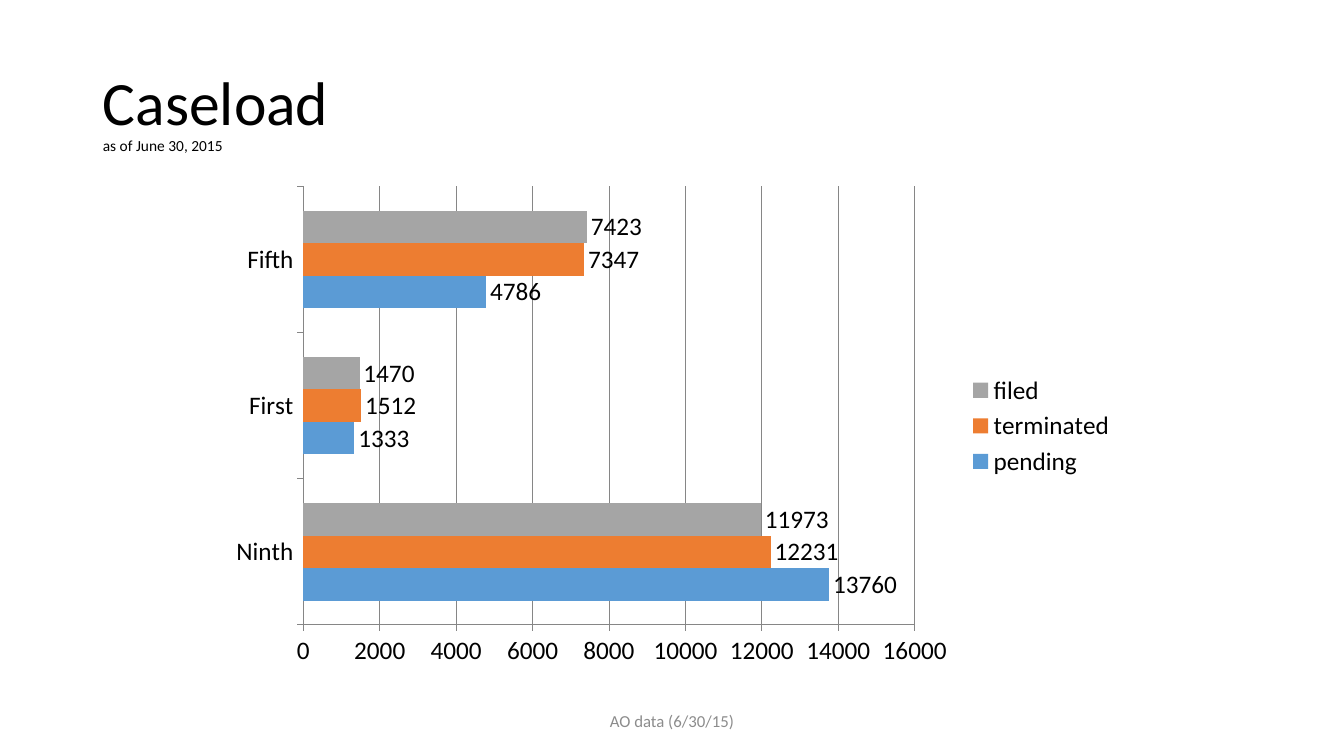
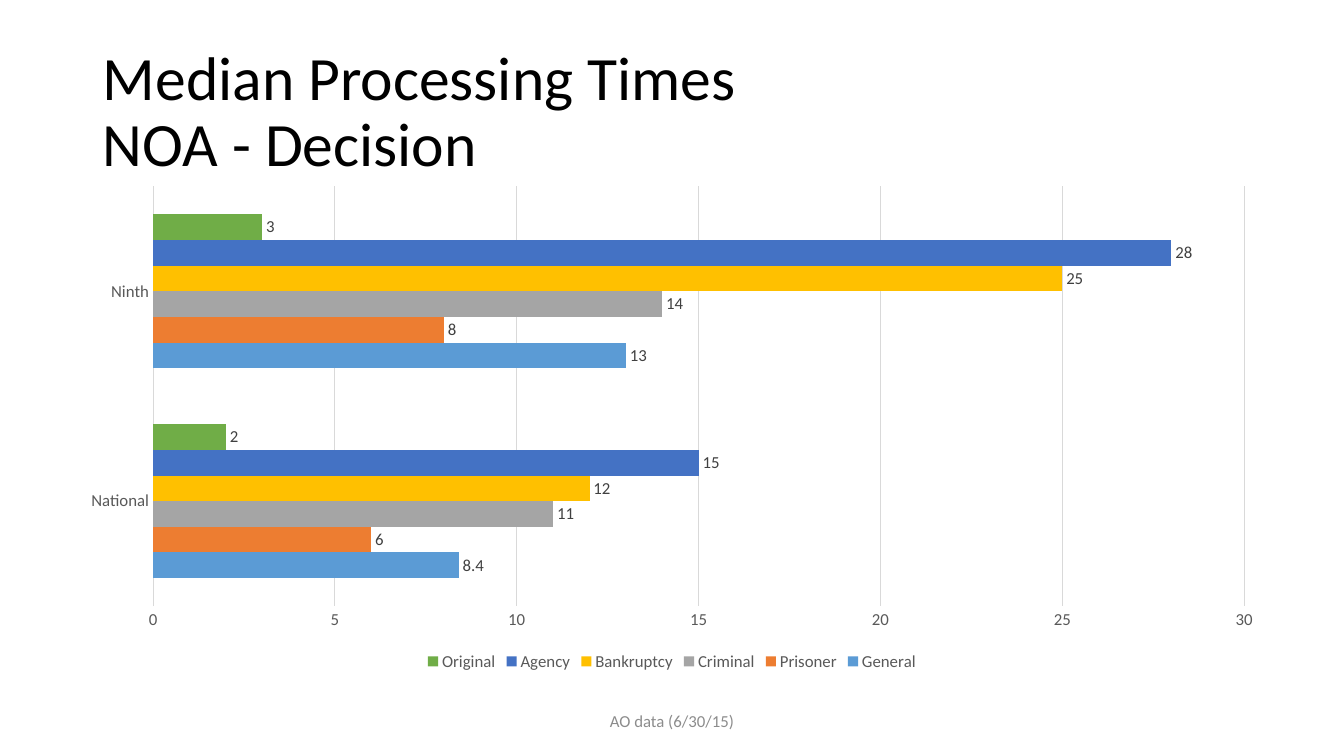
"""Build two slides of court caseload and processing time charts."""
from dataclasses import dataclass

from pptx import Presentation
from pptx.chart.data import CategoryChartData
from pptx.dml.color import RGBColor
from pptx.enum import chart as charts, text
from pptx.util import Inches, Pt

FONT = "Calibri"
BLACK = RGBColor(0x00, 0x00, 0x00)
DARK_GRAY = RGBColor(0x40, 0x40, 0x40)
TEXT_GRAY = RGBColor(0x59, 0x59, 0x59)
AXIS_GRAY = RGBColor(0x86, 0x86, 0x86)
FOOTER_GRAY = RGBColor(0x8C, 0x8C, 0x8C)
GRID_GRAY = RGBColor(0xD9, 0xD9, 0xD9)
SERIES_COLORS = [
    RGBColor(0x5B, 0x9B, 0xD5),
    RGBColor(0xED, 0x7D, 0x31),
    RGBColor(0xA5, 0xA5, 0xA5),
    RGBColor(0xFF, 0xC0, 0x00),
    RGBColor(0x44, 0x72, 0xC4),
    RGBColor(0x70, 0xAD, 0x47),
]
SLIDE_WIDTH = 13.33
CHART_TOP, CHART_HEIGHT = 1.75, 4.95
FOOTER_WIDTH = 4.5
FOOTER_TEXT = "AO data (6/30/15)"


@dataclass
class ChartStyle:
    """Look of a bar chart."""
    size: int
    text_color: RGBColor
    label_color: RGBColor
    line_color: RGBColor
    tick: charts.XL_TICK_MARK
    legend: charts.XL_LEGEND_POSITION
    gap: int
    value_line: bool


CASELOAD_STYLE = ChartStyle(
    18, BLACK, BLACK, AXIS_GRAY, charts.XL_TICK_MARK.OUTSIDE,
    charts.XL_LEGEND_POSITION.RIGHT, 150, True)
TIMES_STYLE = ChartStyle(
    12, TEXT_GRAY, DARK_GRAY, GRID_GRAY, charts.XL_TICK_MARK.NONE,
    charts.XL_LEGEND_POSITION.BOTTOM, 219, False)


def format_font(font, size, color):
    """Set the typeface, size and colour of a font."""
    font.name = FONT
    font.size = Pt(size)
    font.color.rgb = color


def format_line(line, color):
    """Give a chart line its colour and width."""
    line.color.rgb = color
    line.width = Pt(0.75)


def add_title(slide, title, subtitle=""):
    """Fill the title placeholder, with an optional small second line."""
    shape = slide.shapes.title
    shape.left, shape.top = Inches(0.92), Inches(0.4)
    shape.width, shape.height = Inches(11.5), Inches(1.45)
    frame = shape.text_frame
    frame.auto_size = text.MSO_AUTO_SIZE.NONE
    frame.vertical_anchor = text.MSO_ANCHOR.MIDDLE
    frame.text = title
    paragraph = frame.paragraphs[0]
    paragraph.alignment = text.PP_ALIGN.LEFT
    paragraph.line_spacing = 0.9
    format_font(paragraph.font, 44, BLACK)
    if subtitle:
        paragraph.add_line_break()
        run = paragraph.add_run()
        run.text = subtitle
        run.font.size = Pt(11)


def add_footer(slide):
    """Add the centred data source line."""
    left = (SLIDE_WIDTH - FOOTER_WIDTH) / 2
    box = slide.shapes.add_textbox(
        Inches(left), Inches(6.95), Inches(FOOTER_WIDTH), Inches(0.4))
    frame = box.text_frame
    frame.word_wrap = True
    frame.vertical_anchor = text.MSO_ANCHOR.MIDDLE
    paragraph = frame.paragraphs[0]
    paragraph.text = FOOTER_TEXT
    paragraph.alignment = text.PP_ALIGN.CENTER
    format_font(paragraph.font, 12, FOOTER_GRAY)


def format_axes(chart, style):
    """Set ticks, lines and gridlines of both axes."""
    for axis in (chart.category_axis, chart.value_axis):
        axis.major_tick_mark = style.tick
        axis.minor_tick_mark = charts.XL_TICK_MARK.NONE
        format_line(axis.format.line, style.line_color)
    chart.category_axis.has_major_gridlines = False
    chart.value_axis.has_major_gridlines = True
    format_line(chart.value_axis.major_gridlines.format.line, style.line_color)
    if not style.value_line:
        chart.value_axis.format.line.fill.background()


def add_bar_chart(slide, width, categories, series, style):
    """Add a horizontally centred clustered bar chart."""
    data = CategoryChartData()
    data.categories = categories
    for name, values in series.items():
        data.add_series(name, values)
    left = (SLIDE_WIDTH - width) / 2
    chart = slide.shapes.add_chart(
        charts.XL_CHART_TYPE.BAR_CLUSTERED, Inches(left), Inches(CHART_TOP),
        Inches(width), Inches(CHART_HEIGHT), data).chart
    chart.has_title = False
    format_font(chart.font, style.size, style.text_color)
    format_axes(chart, style)
    chart.has_legend = True
    chart.legend.position = style.legend
    chart.legend.include_in_layout = False
    plot = chart.plots[0]
    plot.gap_width = style.gap
    plot.vary_by_categories = False
    plot.has_data_labels = True
    plot.data_labels.show_value = True
    plot.data_labels.position = charts.XL_LABEL_POSITION.OUTSIDE_END
    format_font(plot.data_labels.font, style.size, style.label_color)
    for bars, color in zip(plot.series, SERIES_COLORS):
        bars.format.fill.solid()
        bars.format.fill.fore_color.rgb = color


def add_chart_slide(presentation, title, width, categories, series, style, subtitle=""):
    """Add a slide with a title, a chart and the footer."""
    slide = presentation.slides.add_slide(presentation.slide_layouts[5])
    add_title(slide, title, subtitle)
    add_bar_chart(slide, width, categories, series, style)
    add_footer(slide)


def main():
    """Build and save the presentation."""
    presentation = Presentation()
    presentation.slide_width = Inches(SLIDE_WIDTH)
    presentation.slide_height = Inches(7.5)
    caseload = {
        "pending": (13760, 1333, 4786),
        "terminated": (12231, 1512, 7347),
        "filed": (11973, 1470, 7423),
    }
    add_chart_slide(presentation, "Caseload", 9, ("Ninth", "First", "Fifth"),
                    caseload, CASELOAD_STYLE, "as of June 30, 2015")
    times = {
        "General": (8.4, 13),
        "Prisoner": (6, 8),
        "Criminal": (11, 14),
        "Bankruptcy": (12, 25),
        "Agency": (15, 28),
        "Original": (2, 3),
    }
    add_chart_slide(presentation, "Median Processing Times\vNOA - Decision", 12,
                    ("National", "Ninth"), times, TIMES_STYLE)
    presentation.save("out.pptx")


if __name__ == "__main__":
    main()
